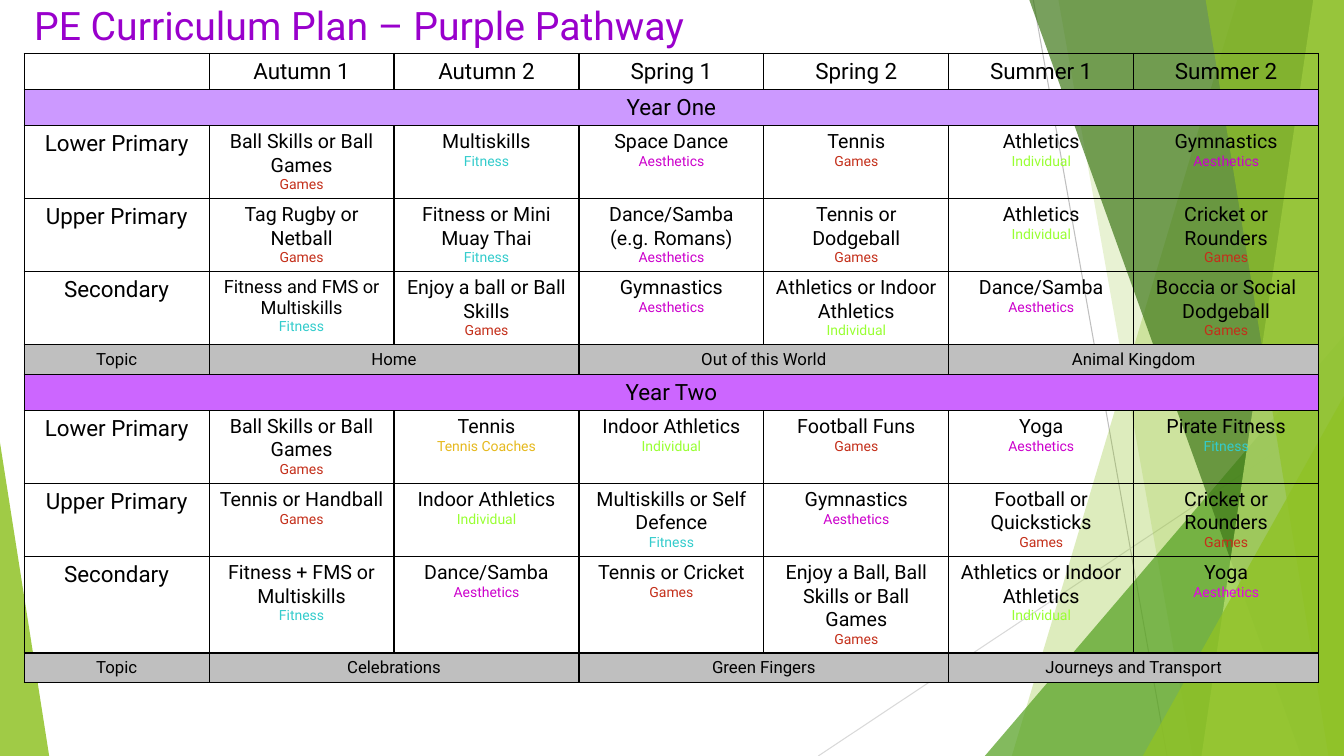
from lxml import etree
from pptx import Presentation
from pptx.dml.color import RGBColor
from pptx.enum import shapes, text
from pptx.oxml import ns
from pptx.util import Cm, Pt

FONT = "Roboto"
WIDE, HIGH = 33.87, 19.05
KINDS = {"Games": "C42F1A", "Fitness": "33CCCC", "Aesthetics": "CC00CC",
         "Individual": "99FF33", "Tennis Coaches": "E6B91E"}
BANDS = {"Year One": "CC99FF", "Year Two": "CC66FF", "Topic": "BFBFBF"}
SPANS = {1: [7], 4: [1, 2, 2, 2], 7: [1] * 7}
PLAN = [
    (0.91, ["", "Autumn 1", "Autumn 2", "Spring 1", "Spring 2", "Summer 1", "Summer 2"]),
    (0.91, ["Year One"]),
    (1.84, ["Lower Primary", "Ball Skills or Ball Games|Games", "Multiskills|Fitness",
            "Space Dance|Aesthetics", "Tennis|Games", "Athletics|Individual",
            "Gymnastics|Aesthetics"]),
    (1.84, ["Upper Primary", "Tag Rugby or Netball|Games", "Fitness or Mini Muay Thai|Fitness",
            "Dance/Samba (e.g. Romans)|Aesthetics", "Tennis or Dodgeball|Games",
            "Athletics|Individual", "Cricket or Rounders|Games"]),
    (1.84, ["Secondary", "Fitness and FMS or Multiskills|Fitness|13",
            "Enjoy a ball or Ball Skills|Games", "Gymnastics|Aesthetics",
            "Athletics or Indoor Athletics|Individual", "Dance/Samba|Aesthetics",
            "Boccia or Social Dodgeball|Games"]),
    (0.75, ["Topic", "Home", "Out of this World", "Animal Kingdom"]),
    (0.91, ["Year Two"]),
    (1.84, ["Lower Primary", "Ball Skills or Ball Games|Games", "Tennis|Tennis Coaches",
            "Indoor Athletics|Individual", "Football Funs|Games", "Yoga|Aesthetics",
            "Pirate Fitness|Fitness"]),
    (1.84, ["Upper Primary", "Tennis or Handball|Games", "Indoor Athletics|Individual",
            "Multiskills or Self Defence|Fitness", "Gymnastics|Aesthetics",
            "Football or Quicksticks|Games", "Cricket or Rounders|Games"]),
    (2.42, ["Secondary", "Fitness + FMS or Multiskills|Fitness", "Dance/Samba|Aesthetics",
            "Tennis or Cricket|Games", "Enjoy a Ball, Ball Skills or Ball Games|Games",
            "Athletics or Indoor Athletics|Individual", "Yoga|Aesthetics|14|E600E6"]),
    (0.75, ["Topic", "Celebrations", "Green Fingers", "Journeys and Transport"]),
]


def hue(code):
    """Turn a hex string into a colour."""
    return RGBColor.from_string(code)


def style(para, size, code="000000"):
    """Format every run of a paragraph."""
    for run in para.runs:
        run.font.name, run.font.size = FONT, Pt(size)
        run.font.color.rgb = hue(code)


def paint(shape, code, alpha):
    """Give a shape a translucent fill with no line or shadow."""
    shape.shadow.inherit = False
    shape.line.fill.background()
    shape.fill.solid()
    shape.fill.fore_color.rgb = hue(code)
    tint = shape.fill._xPr.find(".//" + ns.qn("a:srgbClr"))
    etree.SubElement(tint, ns.qn("a:alpha")).set("val", str(alpha * 1000))


def line(slide, x1, y1, x2, y2, code):
    """Draw a thin straight line."""
    rule = slide.shapes.add_connector(
        shapes.MSO_CONNECTOR.STRAIGHT, Cm(x1), Cm(y1), Cm(x2), Cm(y2))
    rule.line.color.rgb, rule.line.width = hue(code), Pt(0.75)
    etree.SubElement(rule._element.spPr, ns.qn("a:effectLst"))


def shard(slide, top, foot, code, alpha):
    """Draw a full-height panel with a slanted left side."""
    build = slide.shapes.build_freeform(Cm(top), Cm(-0.03))
    points = [(WIDE, -0.03), (WIDE, HIGH), (foot, HIGH)]
    build.add_line_segments([(Cm(x), Cm(y)) for x, y in points], close=True)
    paint(build.convert_to_shape(), code, alpha)


def wedge(slide, left, top, width, peak, code, alpha):
    """Draw a right-angled triangle standing on the bottom edge."""
    shape = slide.shapes.add_shape(
        shapes.MSO_SHAPE.ISOSCELES_TRIANGLE, Cm(left), Cm(top), Cm(width), Cm(HIGH - top))
    shape.adjustments[0] = peak
    paint(shape, code, alpha)


def scene(slide):
    """Draw the green facets behind the table."""
    line(slide, 26.04, 0, 29.41, HIGH, "BFBFBF")
    line(slide, WIDE, 10.24, 20.62, HIGH, "D9D9D9")
    shard(slide, 31.19, 25.5, "90C226", 30)
    shard(slide, 26.67, 30.05, "90C226", 20)
    wedge(slide, 24.82, 8.46, 9.05, 1, "54A021", 72)
    shard(slide, 25.93, 32.79, "3F7819", 70)
    shard(slide, 33.1, 30.28, "C0E474", 70)
    shard(slide, 30.38, 33.48, "90C226", 65)
    wedge(slide, 28.8, 9.98, 5.07, 1, "90C226", 80)
    wedge(slide, 0, 11.15, 1.24, 0, "90C226", 85)


def title(slide, words):
    """Write the slide heading."""
    box = slide.shapes.add_textbox(Cm(0.61), Cm(-0.1), Cm(32.64), Cm(1.9))
    frame = box.text_frame
    frame.word_wrap, frame.margin_top = True, Cm(0.13)
    frame.text = words
    style(frame.paragraphs[0], 28, "9900CC")


def frame_cell(cell, code):
    """Border a cell and fill it, or leave it clear."""
    cell.margin_top, cell.margin_bottom = Cm(0.12), Cm(0.1)
    props = cell._tc.get_or_add_tcPr()
    for side in ("lnL", "lnR", "lnT", "lnB"):
        edge = etree.SubElement(props, ns.qn("a:" + side), w=str(Pt(1)))
        fill = etree.SubElement(edge, ns.qn("a:solidFill"))
        etree.SubElement(fill, ns.qn("a:srgbClr"), val="000000")
    if code:
        cell.fill.solid()
        cell.fill.fore_color.rgb = hue(code)
    else:
        cell.fill.background()


def write(cell, entry, size):
    """Write a label, or an activity above its coloured kind."""
    name, *more = entry.split("|")
    cell.text_frame.text = name
    para = cell.text_frame.paragraphs[0]
    if more:
        kind, *odd = more
        size = int(odd[0]) if odd else 14
        note = cell.text_frame.add_paragraph()
        note.text = kind
        style(note, 10, odd[1] if odd[1:] else KINDS[kind])
    style(para, size)


def grid(slide):
    """Build the curriculum table."""
    total = sum(tall for tall, _ in PLAN)
    table = slide.shapes.add_table(
        len(PLAN), 7, Cm(0.61), Cm(1.35), Cm(7 * 4.66), Cm(total)).table
    table.first_row = table.horz_banding = False
    for col in table.columns:
        col.width = Cm(4.66)
    for r, (tall, row) in enumerate(PLAN):
        table.rows[r].height = Cm(tall)
        c = 0
        for entry, span in zip(row, SPANS[len(row)]):
            cell = table.cell(r, c)
            if span > 1:
                cell.merge(table.cell(r, c + span - 1))
            write(cell, entry, 12 if row[0] == "Topic" else 16)
            c += span
        for cell in table.rows[r].cells:
            frame_cell(cell, BANDS.get(row[0]))
            for para in cell.text_frame.paragraphs:
                para.alignment = text.PP_ALIGN.CENTER
                para._p.get_or_add_endParaRPr().set("sz", "1000")


def main():
    """Build and save the slide."""
    deck = Presentation()
    deck.slide_width, deck.slide_height = Cm(WIDE), Cm(HIGH)
    slide = deck.slides.add_slide(deck.slide_layouts[6])
    scene(slide)
    title(slide, "PE Curriculum Plan – Purple Pathway")
    grid(slide)
    deck.save("out.pptx")


if __name__ == "__main__":
    main()
